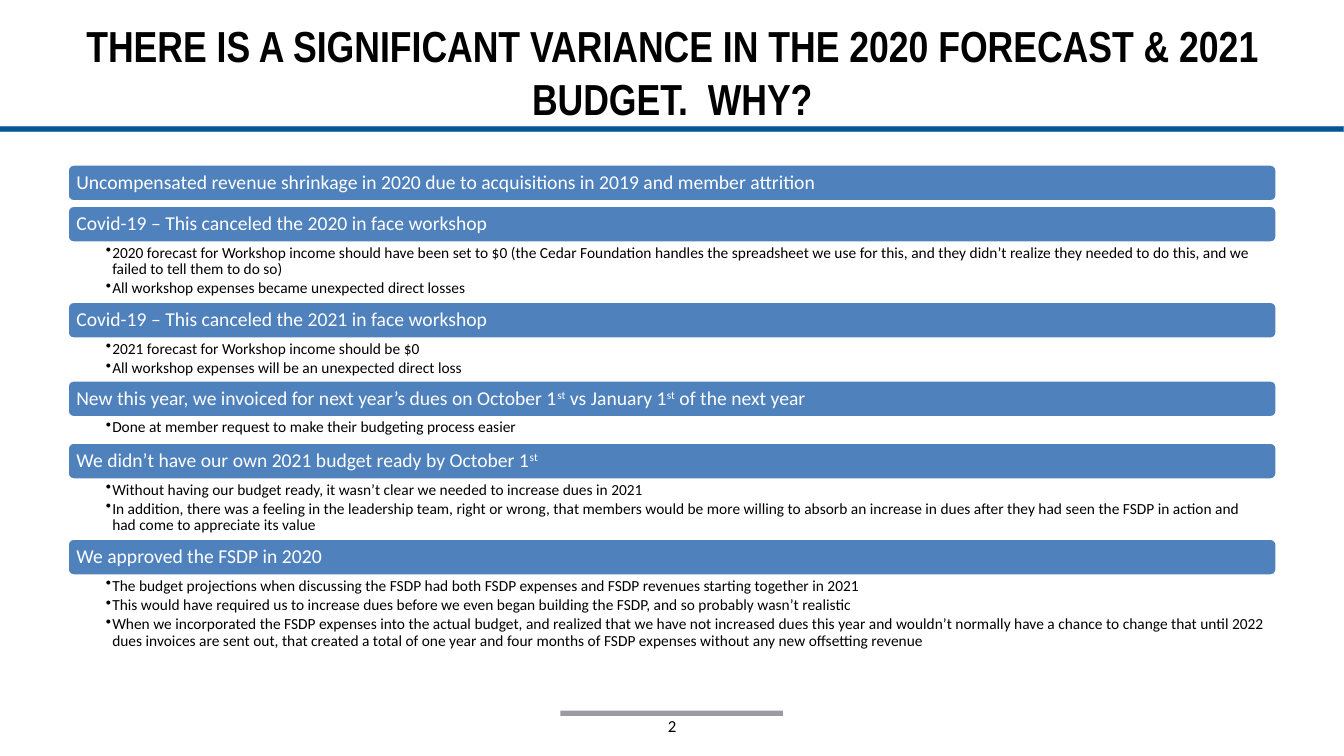
from dataclasses import dataclass

from lxml.etree import SubElement
from pptx import Presentation
from pptx.dml.color import RGBColor
from pptx.enum.shapes import MSO_SHAPE
from pptx.enum.text import MSO_ANCHOR, PP_ALIGN
from pptx.oxml.ns import qn
from pptx.util import Cm, Pt


@dataclass(frozen=True)
class Theme:
    title_font: str = "Arial Narrow"
    body_font: str = "Calibri"
    title_size: float = 31
    heading_size: float = 14
    detail_size: float = 11
    number_size: float = 12
    black: str = "000000"
    white: str = "FFFFFF"
    bar: str = "4F81BD"
    rule: str = "00588D"
    rule_edge: str = "4B7EBC"
    footer: str = "9A9C9F"


class SlideBuilder:
    def __init__(self, slide, theme):
        self.slide = slide
        self.theme = theme

    def block(self, preset, left, top, width, height, fill, edge=None, weight=0):
        shape = self.slide.shapes.add_shape(
            preset, Cm(left), Cm(top), Cm(width), Cm(height))
        shape.shadow.inherit = False
        shape.fill.solid()
        shape.fill.fore_color.rgb = RGBColor.from_string(fill)
        if edge:
            shape.line.color.rgb = RGBColor.from_string(edge)
            shape.line.width = Pt(weight)
        else:
            shape.line.fill.background()
        return shape

    def frame(self, shape, margins, anchor):
        frame = shape.text_frame
        frame.word_wrap = True
        frame.vertical_anchor = anchor
        (frame.margin_left, frame.margin_top,
         frame.margin_right, frame.margin_bottom) = map(Cm, margins)
        return frame

    def run(self, paragraph, text, font, size, color, bold=False, raised=False):
        run = paragraph.add_run()
        run.text = text
        run.font.name = font
        run.font.size = Pt(size)
        run.font.bold = bold
        run.font.color.rgb = RGBColor.from_string(color)
        if raised:
            run.font._element.set("baseline", "30000")

    def centred_text(self, left, top, width, height, text, font, size, bold=False):
        box = self.slide.shapes.add_textbox(Cm(left), Cm(top), Cm(width), Cm(height))
        frame = self.frame(box, (0.25, 0.13, 0.25, 0.13), MSO_ANCHOR.MIDDLE)
        paragraph = frame.paragraphs[0]
        paragraph.alignment = PP_ALIGN.CENTER
        self.run(paragraph, text, font, size, self.theme.black, bold)

    def heading_bar(self, left, top, width, height, parts):
        theme = self.theme
        bar = self.block(MSO_SHAPE.ROUNDED_RECTANGLE, left, top, width, height,
                         theme.bar, theme.white, 2)
        frame = self.frame(bar, (0.18, 0.15, 0.18, 0.15), MSO_ANCHOR.MIDDLE)
        paragraph = frame.paragraphs[0]
        paragraph.alignment = PP_ALIGN.LEFT
        paragraph.line_spacing = 0.9
        for part in parts:
            self.run(paragraph, part, theme.body_font, theme.heading_size,
                     theme.white, raised=part == "st")

    def details(self, left, top, width, height, reasons):
        theme = self.theme
        box = self.slide.shapes.add_textbox(Cm(left), Cm(top), Cm(width), Cm(height))
        frame = self.frame(box, (0.97, 0.05, 0.28, 0.05), MSO_ANCHOR.TOP)
        for index, reason in enumerate(reasons):
            paragraph = frame.add_paragraph() if index else frame.paragraphs[0]
            properties = paragraph._p.get_or_add_pPr()
            properties.set("marL", str(Cm(0.16)))
            properties.set("indent", str(-Cm(0.16)))
            SubElement(properties, qn("a:buChar")).set("char", "•")
            paragraph.line_spacing = 0.9
            paragraph.space_after = Pt(1.8)
            self.run(paragraph, reason, theme.body_font, theme.detail_size, theme.black)


# Heading parts, height of the details below, detail bullets
SECTIONS = [
    (["Uncompensated revenue shrinkage in 2020 due to acquisitions in 2019 "
      "and member attrition"], 0.1, []),
    (["Covid-19 – This canceled the 2020 in face workshop"], 1.48, [
        "2020 forecast for Workshop income should have been set to $0 (the Cedar "
        "Foundation handles the spreadsheet we use for this, and they didn’t realize "
        "they needed to do this, and we failed to tell them to do so)",
        "All workshop expenses became unexpected direct losses"]),
    (["Covid-19 – This canceled the 2021 in face workshop"], 1.04, [
        "2021 forecast for Workshop income should be $0",
        "All workshop expenses will be an unexpected direct loss"]),
    (["New this year, we invoiced for next year’s dues on October 1", "st",
      " vs January 1", "st", " of the next year"], 0.63, [
        "Done at member request to make their budgeting process easier"]),
    (["We didn’t have our own 2021 budget ready by October 1", "st"], 1.48, [
        "Without having our budget ready, it wasn’t clear we needed to increase "
        "dues in 2021",
        "In addition, there was a feeling in the leadership team, right or wrong, that "
        "members would be more willing to absorb an increase in dues after they had "
        "seen the FSDP in action and had come to appreciate its value"]),
    (["We approved the FSDP in 2020"], 2.01, [
        "The budget projections when discussing the FSDP had both FSDP expenses and "
        "FSDP revenues starting together in 2021",
        "This would have required us to increase dues before we even began building "
        "the FSDP, and so probably wasn’t realistic",
        "When we incorporated the FSDP expenses into the actual budget, and realized "
        "that we have not increased dues this year and wouldn’t normally have a chance "
        "to change that until 2022 dues invoices are sent out, that created a total of "
        "one year and four months of FSDP expenses without any new offsetting "
        "revenue"]),
]
SLIDE_WIDTH = 33.87
LEFT, WIDTH = 1.7, 30.48
BAR_HEIGHT = 0.94


def main():
    presentation = Presentation()
    presentation.slide_width = Cm(SLIDE_WIDTH)
    presentation.slide_height = Cm(19.05)
    theme = Theme()
    slide = presentation.slides.add_slide(presentation.slide_layouts[6])
    builder = SlideBuilder(slide, theme)

    # Footer mark and rule under the title
    builder.block(MSO_SHAPE.RECTANGLE, 14.12, 17.91, 5.61, 0.13, theme.footer)
    builder.block(MSO_SHAPE.RECTANGLE, 0, 3.19, SLIDE_WIDTH, 0.13,
                  theme.rule, theme.rule_edge, 0.75)

    # Title
    builder.centred_text(
        LEFT, 1.22, WIDTH, 1.17,
        "THERE IS A SIGNIFICANT VARIANCE IN THE 2020 FORECAST & 2021 BUDGET.  WHY?",
        theme.title_font, theme.title_size, bold=True)

    # Reasons, stacked from the top
    top = 4.14
    for heading, details_height, reasons in SECTIONS:
        builder.heading_bar(LEFT, top, WIDTH, BAR_HEIGHT, heading)
        top += BAR_HEIGHT
        if reasons:
            builder.details(LEFT, top, WIDTH, details_height, reasons)
        top += details_height

    # Page number
    builder.centred_text(13.13, 17.78, 7.62, 1.02, "2",
                         theme.body_font, theme.number_size)

    presentation.save("out.pptx")


if __name__ == "__main__":
    main()
